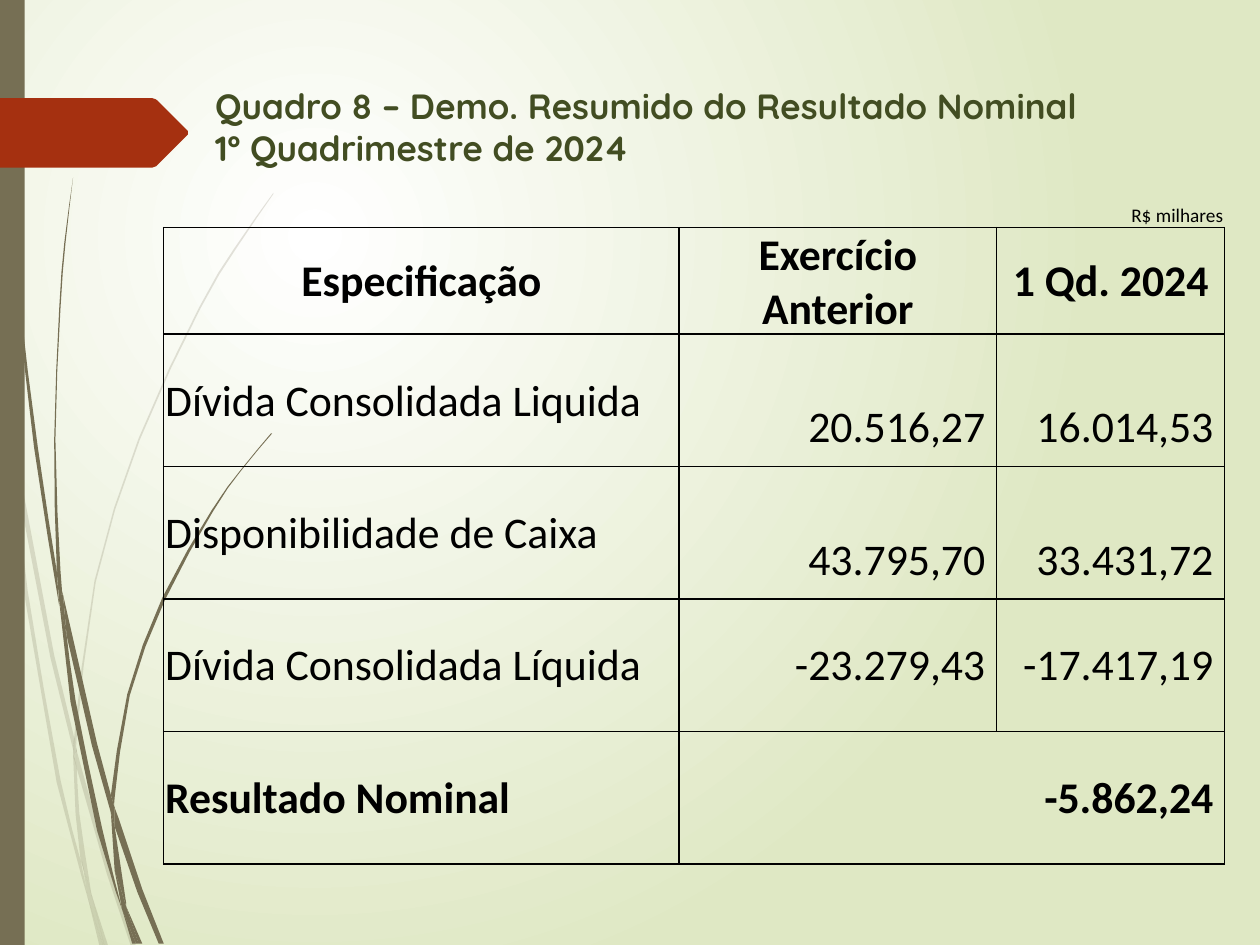
import dataclasses
import pptx
import pptx.dml.color
import pptx.enum.shapes
import pptx.enum.text
import pptx.oxml
import pptx.oxml.ns
import pptx.util
from pptx.util import Cm

RGBColor = pptx.dml.color.RGBColor
WHITE = RGBColor(0xFF, 0xFF, 0xFF)
PALE_GREEN = RGBColor(0xDF, 0xE8, 0xC4)
OLIVE_BROWN = RGBColor(0x76, 0x6F, 0x54)
RUST = RGBColor(0xA5, 0x30, 0x10)
DARK_GREEN = RGBColor(0x42, 0x4D, 0x22)
BLACK = RGBColor(0, 0, 0)

GRID = Cm(2.54) / 100
NO_STYLE = "{2D5ABB26-0587-4C30-8999-92F81FD0307C}"

PALE_BLADES = [
    ([(0, 282), (6, 322), (8, 350)], [(7, 344), (0, 299)]),
    ([(10, 345), (43, 520), (59, 586)], [(59, 599), (40, 522), (12, 376)]),
    ([(61, 596), (64, 607), (88, 692), (108, 751)], [(104, 751), (85, 694), (61, 610)]),
    ([(73, 711), (86, 751)], [(83, 751)]),
    ([(8, 350), (12, 376), (22, 469), (48, 619), (64, 683), (70, 714)],
     [(64, 693), (45, 621), (19, 470), (8, 350)]),
    ([(58, 599), (61, 610), (63, 646), (72, 706), (73, 711)],
     [(67, 692), (64, 683), (60, 646), (58, 599)]),
    ([(59, 586), (59, 584), (75, 461), (110, 348), (158, 244), (186, 197), (217, 153)],
     [(217, 154), (187, 198), (159, 245), (111, 349), (76, 462), (61, 584), (61, 596)]),
    ([(70, 714), (82, 751)], [(79, 751)]),
    ([(59, 586), (61, 596), (61, 610)], [(58, 599)]),
    ([(65, 683), (70, 714), (82, 751)], [(83, 751), (73, 711), (67, 692)]),
]
DARK_BLADES = [
    ([(2, 0), (3, 48), (5, 110), (14, 233), (27, 355), (47, 481)],
     [(45, 453), (30, 355), (15, 232), (6, 109), (4, 48), (3, 0)]),
    ([(50, 472), (77, 590), (88, 631)], [(88, 645), (73, 592), (53, 505)]),
    ([(91, 641), (94, 649), (113, 706), (130, 749)], [(126, 749), (109, 708), (91, 656)]),
    ([(47, 477), (53, 505), (60, 556), (81, 657), (97, 722)],
     [(92, 708), (77, 659), (56, 557), (47, 477)]),
    ([(58, 141), (51, 193), (47, 245), (43, 349), (45, 449), (49, 472)],
     [(50, 472), (48, 453), (44, 349), (48, 245), (52, 193), (58, 141)]),
    ([(100, 719), (113, 749)], [(110, 749)]),
    ([(45, 449), (49, 472)], [(50, 472), (53, 505)], [(47, 477), (45, 453)]),
    ([(215, 344), (191, 373), (168, 405), (129, 474), (101, 551), (88, 631)],
     [(91, 641), (91, 633), (103, 552), (131, 476), (169, 406), (191, 374), (216, 344)]),
    ([(97, 722), (108, 749)], [(105, 749)]),
    ([(88, 645), (91, 656), (100, 716), (100, 719)], [(96, 706), (91, 691)]),
    ([(88, 631), (91, 641), (91, 656)], [(88, 645)]),
    ([(91, 691), (97, 722), (108, 749)], [(110, 749), (100, 719), (96, 706)]),
]
ARROW_OUTLINE = [(0, 0), (121, 0), (124, 1), (149, 26), (149, 29), (124, 54), (121, 55), (0, 55)]

COLUMN_WIDTHS = [6.07, 3.38, 0.94, 6.4, 4.6]
ROW_HEIGHTS = [1.47, 1.47] + [2.67] * 4
TABLE_ROWS = [
    ("Especificação", "Exercício Anterior", "1 Qd. 2024"),
    ("Dívida Consolidada Liquida", "20.516,27", "16.014,53"),
    ("Disponibilidade de Caixa", "43.795,70", "33.431,72"),
    ("Dívida Consolidada Líquida", "-23.279,43", "-17.417,19"),
    ("Resultado Nominal", "-5.862,24"),
]


@dataclasses.dataclass
class Box:
    left: int
    top: int
    width: int
    height: int


def smooth_edge(points):
    if len(points) < 5:
        return points
    padded = [points[0], *points, points[-1]]
    result = [points[0]]
    for before, start, end, after in zip(padded, padded[1:], padded[2:], padded[3:]):
        middle = tuple((9 * (q + r) - p - s) / 16
                       for p, q, r, s in zip(before, start, end, after))
        result += [middle, end]
    return result


def paint(shape, color):
    shape.shadow.inherit = False
    shape.fill.solid()
    shape.fill.fore_color.rgb = color
    shape.line.fill.background()


def add_outline(shapes, box, points, color):
    scaled = [(x * GRID, y * GRID) for x, y in points]
    builder = shapes.build_freeform(*scaled[0])
    builder.add_line_segments(scaled[1:], close=True)
    shape = builder.convert_to_shape(box.left, box.top)
    paint(shape, color)
    return shape


def add_blades(slide, box, blades, opacity):
    group = slide.shapes.add_group_shape()
    for edges in blades:
        points = [point for edge in edges for point in smooth_edge(edge)]
        shape = add_outline(group.shapes, box, points, OLIVE_BROWN)
        if opacity < 100:
            color = shape.element.spPr.find(".//" + pptx.oxml.ns.qn("a:srgbClr"))
            color.append(pptx.oxml.parse_xml(
                f'<a:alpha {pptx.oxml.ns.nsdecls("a")} val="{opacity * 1000}"/>'))


def set_background(slide):
    fill = slide.background.fill
    fill.gradient()
    for stop, color in zip(fill.gradient_stops, (WHITE, PALE_GREEN)):
        stop.color.rgb = color
    linear = slide.element.find(".//" + pptx.oxml.ns.qn("a:lin"))
    linear.getparent().replace(linear, pptx.oxml.parse_xml(
        f'<a:path {pptx.oxml.ns.nsdecls("a")} path="circle">'
        '<a:fillToRect l="50000" t="50000" r="100000" b="100000"/></a:path>'))


def add_side_decoration(slide, box):
    add_blades(slide, box, PALE_BLADES, 20)
    add_blades(slide, box, DARK_BLADES, 100)
    bar = slide.shapes.add_shape(
        pptx.enum.shapes.MSO_SHAPE.RECTANGLE, box.left, box.top, Cm(0.5), box.height)
    paint(bar, OLIVE_BROWN)
    arrow_box = Box(box.left, box.top + Cm(1.98), Cm(3.78), Cm(1.4))
    add_outline(slide.shapes, arrow_box, ARROW_OUTLINE, RUST)


def format_runs(paragraph, font_name, size, color, bold):
    for run in paragraph.runs:
        run.font.name = font_name
        run.font.size = pptx.util.Pt(size)
        run.font.color.rgb = color
        run.font.bold = bold


def add_title(slide, box):
    text_frame = slide.shapes.add_textbox(box.left, box.top, box.width, box.height).text_frame
    text_frame.word_wrap = True
    paragraph = text_frame.paragraphs[0]
    paragraph.text = "Quadro 8 – Demo. Resumido do Resultado Nominal\v1º Quadrimestre de 2024"
    format_runs(paragraph, "Quicksand", 20, DARK_GREEN, True)


def set_borders(cell, sides):
    properties = cell._tc.get_or_add_tcPr()
    for index, side in enumerate(sides):
        properties.insert(index, pptx.oxml.parse_xml(
            f'<a:ln{side} {pptx.oxml.ns.nsdecls("a")} w="12700"><a:solidFill>'
            f'<a:srgbClr val="{BLACK}"/></a:solidFill></a:ln{side}>'))


def fill_cell(cell, text, size, bold, alignment, anchor):
    cell.vertical_anchor = anchor
    paragraph = cell.text_frame.paragraphs[0]
    paragraph.text = text
    paragraph.alignment = alignment
    format_runs(paragraph, "Calibri", size, BLACK, bold)


def add_result_table(slide, box):
    align = pptx.enum.text.PP_ALIGN
    anchor = pptx.enum.text.MSO_ANCHOR
    table = slide.shapes.add_table(
        len(ROW_HEIGHTS), len(COLUMN_WIDTHS), box.left, box.top, box.width, box.height).table
    table.first_row = table.horz_banding = False
    table._tbl.tblPr.find(pptx.oxml.ns.qn("a:tableStyleId")).text = NO_STYLE
    for column, width in zip(table.columns, COLUMN_WIDTHS):
        column.width = Cm(width)
    for index, height in enumerate(ROW_HEIGHTS):
        table.rows[index].height = Cm(height)
        for cell in table.rows[index].cells:
            cell.fill.background()
            cell.margin_left = cell.margin_right = cell.margin_top = Cm(0.03)
            cell.margin_bottom = 0
            set_borders(cell, "LRTB" if index else "B")
    fill_cell(table.cell(0, 4), "R$ milhares", 11, False, align.RIGHT, anchor.BOTTOM)
    last = len(TABLE_ROWS)
    for index, texts in enumerate(TABLE_ROWS, start=1):
        table.cell(index, 0).merge(table.cell(index, 2))
        for column, text in zip((0, 3, 4), texts):
            cell = table.cell(index, column)
            alignment = align.CENTER if index == 1 else align.RIGHT if column else align.LEFT
            fill_cell(cell, text, 25, index in (1, last), alignment, anchor.MIDDLE)
            if alignment == align.RIGHT:
                cell.margin_right = Cm(0.23)
                if index in (2, 3):
                    cell.margin_top = Cm(1.1)
    table.cell(last, 3).merge(table.cell(last, 4))


def main():
    presentation = pptx.Presentation()
    presentation.slide_width = Cm(25.4)
    presentation.slide_height = Cm(19.05)
    slide = presentation.slides.add_slide(presentation.slide_layouts[6])
    set_background(slide)
    add_side_decoration(slide, Box(0, 0, Cm(5.5), presentation.slide_height))
    add_title(slide, Box(Cm(4.09), Cm(1.57), Cm(24.54), Cm(2.92)))
    add_result_table(slide, Box(Cm(3.3), Cm(3.12), Cm(21.39), Cm(13.62)))
    presentation.save("out.pptx")


if __name__ == "__main__":
    main()
